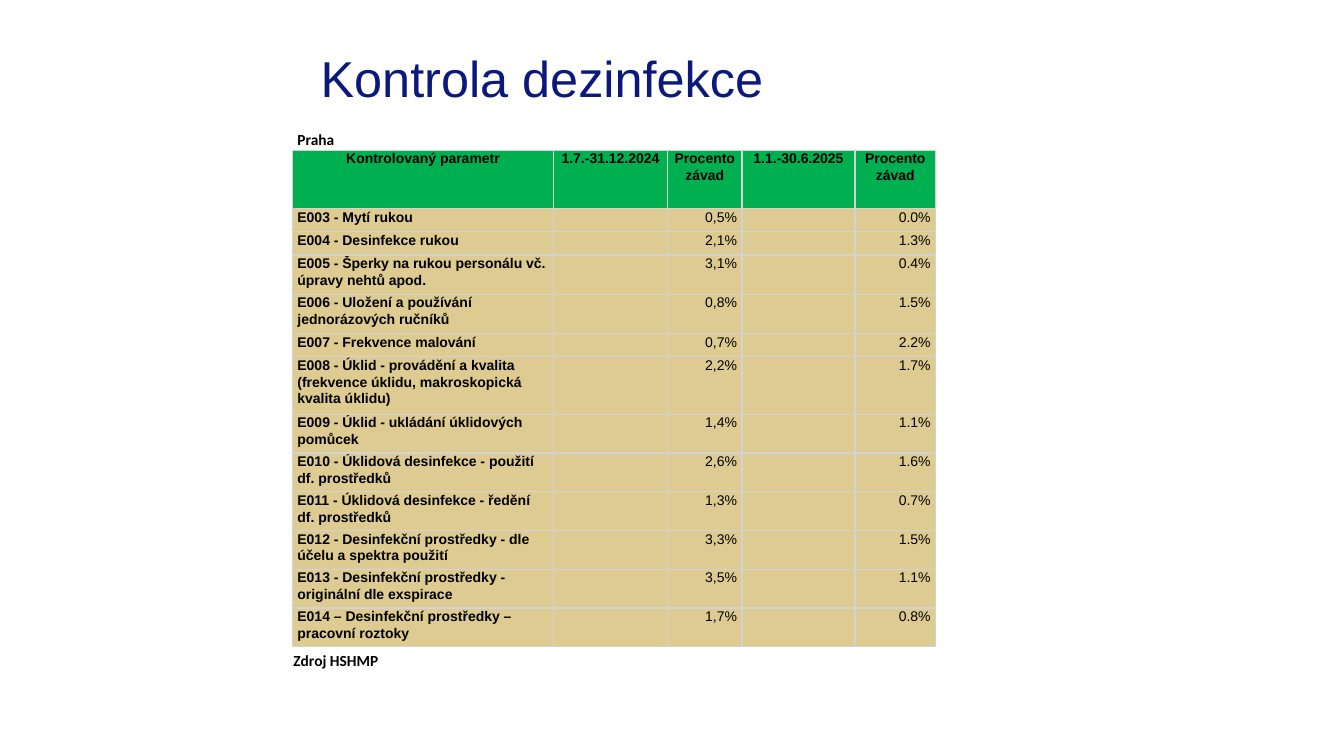
import pptx
import pptx.util
import pptx.dml.color
import pptx.enum.text
import pptx.oxml.ns
import lxml.etree

Inches, Pt = pptx.util.Inches, pptx.util.Pt
ALIGN = pptx.enum.text.PP_ALIGN
ANCHOR = pptx.enum.text.MSO_ANCHOR
COLORS = {"title": "0C197C", "text": "000000", "header": "00B050",
          "body": "DDCB91", "border": "D3D3D3"}
COLUMNS = [2.59, 1.13, 0.74, 1.12, 0.8]
ROWS = [0.37, 0.58, 0.23, 0.23, 0.39, 0.39, 0.23, 0.57] + [0.385] * 6
HEADER = ["Kontrolovaný parametr", "1.7.-31.12.2024", "Procento\nzávad",
          "1.1.-30.6.2025", "Procento závad"]
CHECKS = [
    ("E003 - Mytí rukou", "0,5%", "0.0%"),
    ("E004 - Desinfekce rukou", "2,1%", "1.3%"),
    ("E005 - Šperky na rukou personálu vč. úpravy nehtů apod.", "3,1%", "0.4%"),
    ("E006 - Uložení a používání jednorázových ručníků", "0,8%", "1.5%"),
    ("E007 - Frekvence malování", "0,7%", "2.2%"),
    ("E008 - Úklid - provádění a kvalita (frekvence úklidu, makroskopická kvalita úklidu)",
     "2,2%", "1.7%"),
    ("E009 - Úklid - ukládání úklidových pomůcek", "1,4%", "1.1%"),
    ("E010 - Úklidová desinfekce - použití df. prostředků", "2,6%", "1.6%"),
    ("E011 - Úklidová desinfekce - ředění df. prostředků", "1,3%", "0.7%"),
    ("E012 - Desinfekční prostředky - dle účelu a spektra použití", "3,3%", "1.5%"),
    ("E013 - Desinfekční prostředky - originální dle exspirace", "3,5%", "1.1%"),
    ("E014 – Desinfekční prostředky – pracovní roztoky", "1,7%", "0.8%"),
]


def rgb(name):
    return pptx.dml.color.RGBColor.from_string(COLORS[name])


def style(p, size, face, color="text", bold=False, align=ALIGN.LEFT, spacing=1.0):
    p.alignment = align
    p.line_spacing = spacing
    p.space_before = p.space_after = Pt(0)
    p.font.size, p.font.name, p.font.bold = Pt(size), face, bold
    p.font.color.rgb = rgb(color)


def set_borders(cell, sides):
    qn = pptx.oxml.ns.qn
    tc_pr = cell._tc.get_or_add_tcPr()
    for i, side in enumerate(sides):
        ln = lxml.etree.Element(qn("a:ln" + side), w=str(Pt(1)))
        fill = lxml.etree.SubElement(ln, qn("a:solidFill"))
        lxml.etree.SubElement(fill, qn("a:srgbClr"), val=COLORS["border"])
        tc_pr.insert(i, ln)


def fill_cell(cell, text, size, face, bold, align, anchor=ANCHOR.TOP):
    cell.margin_left = cell.margin_right = Inches(0.05)
    cell.margin_top = cell.margin_bottom = 0
    cell.vertical_anchor = anchor
    cell.text = text
    for p in cell.text_frame.paragraphs:
        style(p, size, face, bold=bold, align=align, spacing=1.07)
        if not text:
            lxml.etree.SubElement(p._p, pptx.oxml.ns.qn("a:endParaRPr"), sz=str(size * 100))


def add_title(slide, left, top, width, height):
    sp = slide.shapes.title
    sp.left, sp.top, sp.width, sp.height = map(Inches, (left, top, width, height))
    tf = sp.text_frame
    tf.text = "Kontrola dezinfekce"
    tf.word_wrap = True
    tf.vertical_anchor = ANCHOR.MIDDLE
    style(tf.paragraphs[0], 36, "Arial", "title", spacing=0.9)


def add_checks_table(slide, left, top):
    frame = slide.shapes.add_table(len(ROWS), len(COLUMNS), Inches(left), Inches(top),
                                   Inches(sum(COLUMNS)), Inches(sum(ROWS)))
    table = frame.table
    table.first_row = table.horz_banding = False
    for column, width in zip(table.columns, COLUMNS):
        column.width = Inches(width)
    for row, height in zip(table.rows, ROWS):
        row.height = Inches(height)
    body = [[name, "", before, "", after] for name, before, after in CHECKS]
    for r, texts in enumerate([["Praha", "", "", "", ""], HEADER] + body):
        for c, text in enumerate(texts):
            cell = table.cell(r, c)
            if r == 0:
                fill_cell(cell, text, 11, "Calibri", True, ALIGN.LEFT, ANCHOR.BOTTOM)
                cell.fill.background()
                set_borders(cell, "B")
                continue
            header = r == 1
            align = ALIGN.CENTER if header else ALIGN.RIGHT if c else ALIGN.LEFT
            fill_cell(cell, text, 10, "Arial", header or c == 0, align)
            cell.fill.solid()
            cell.fill.fore_color.rgb = rgb("header" if header else "body")
            set_borders(cell, "LRTB")


def add_source_note(slide, left, top, width, height):
    tf = slide.shapes.add_textbox(*map(Inches, (left, top, width, height))).text_frame
    tf.word_wrap = True
    tf.margin_left = 0
    tf.vertical_anchor = ANCHOR.MIDDLE
    tf.text = "Zdroj HSHMP"
    style(tf.paragraphs[0], 11, "Calibri", bold=True)


def main():
    prs = pptx.Presentation()
    prs.slide_width, prs.slide_height = Inches(13.33), Inches(7.5)
    slide = prs.slides.add_slide(prs.slide_layouts[5])
    add_title(slide, 3.08, 0.08, 10, 1.45)
    add_checks_table(slide, 2.9, 1.12)
    add_source_note(slide, 2.91, 6.41, sum(COLUMNS), 0.29)
    prs.save("out.pptx")


if __name__ == "__main__":
    main()
